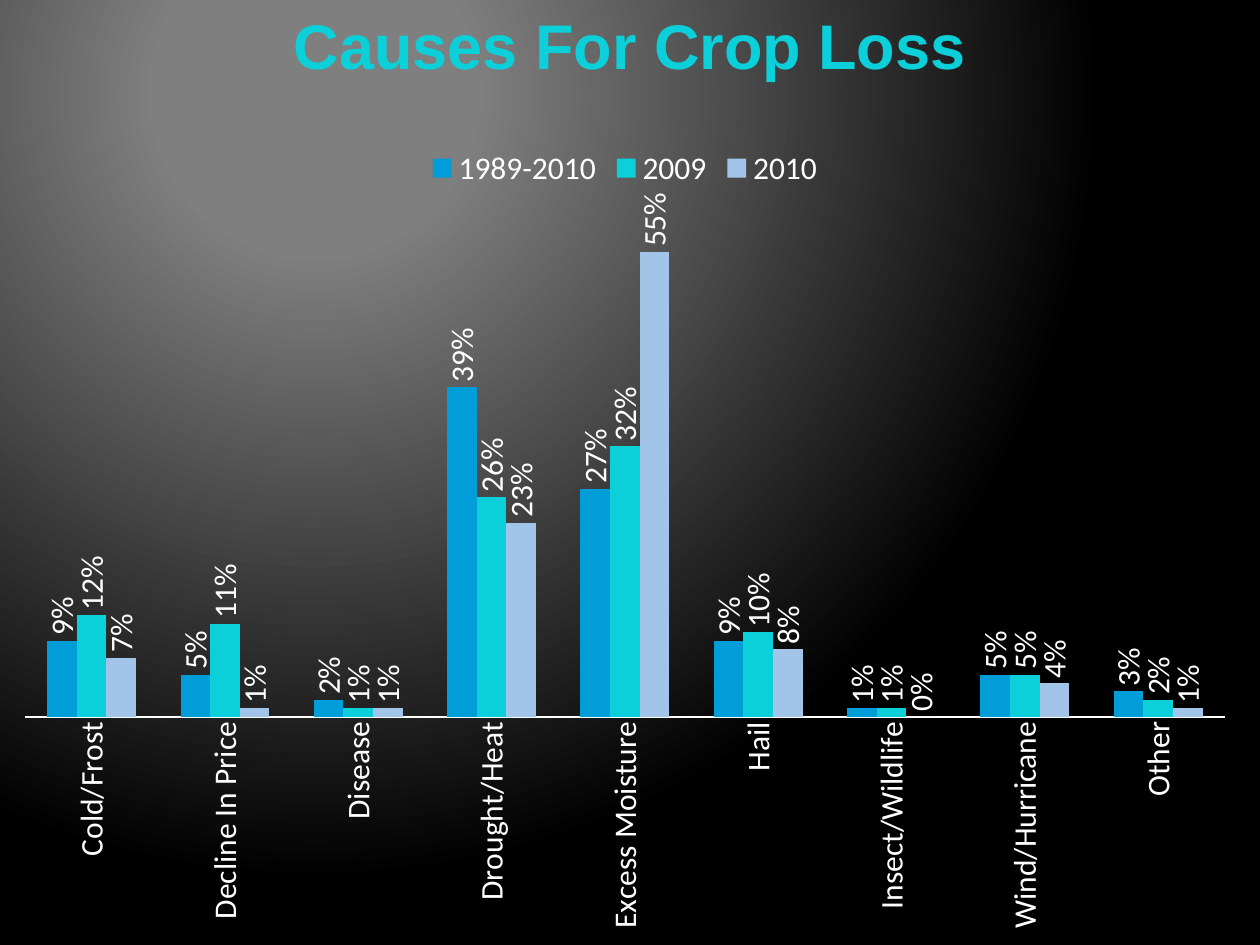
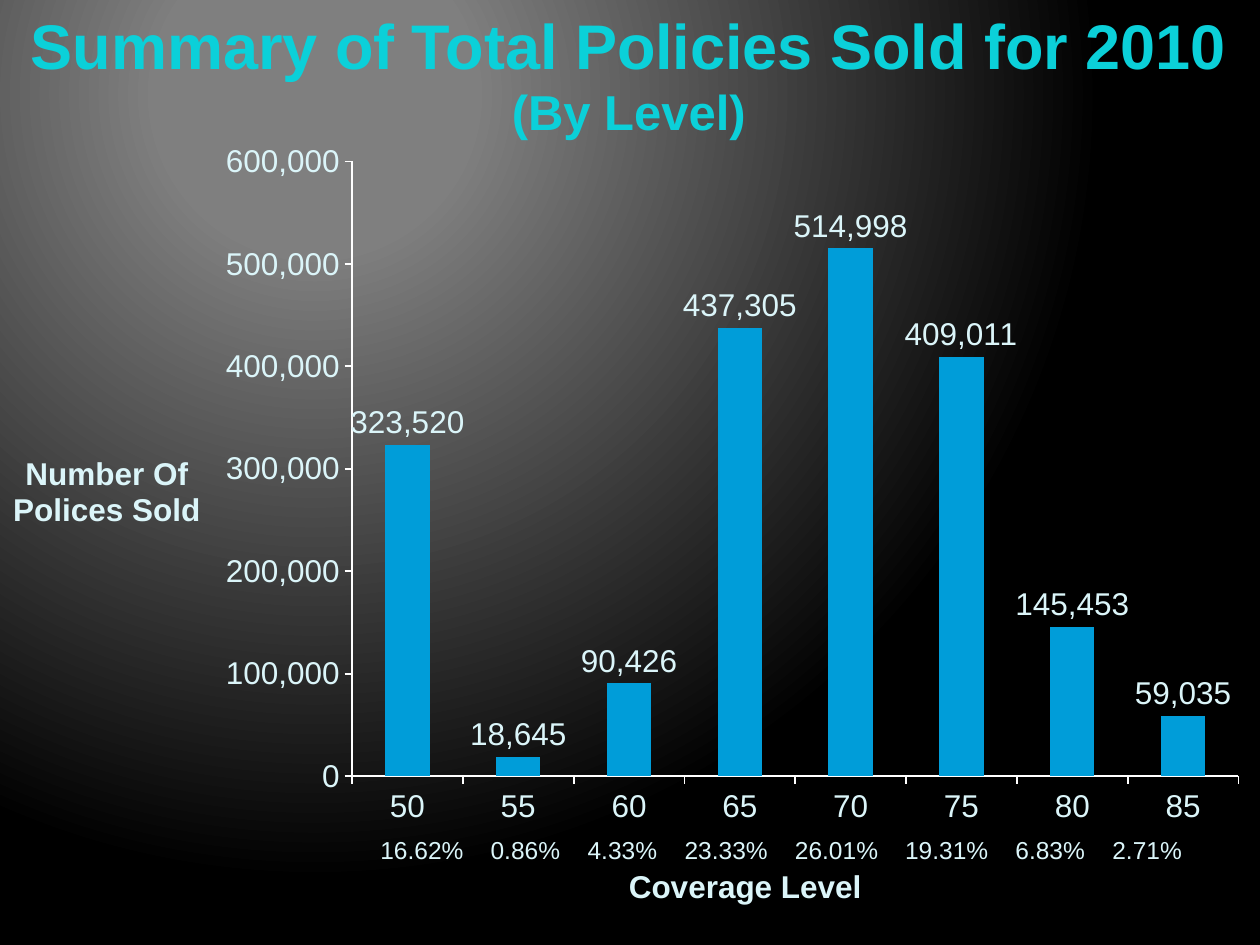
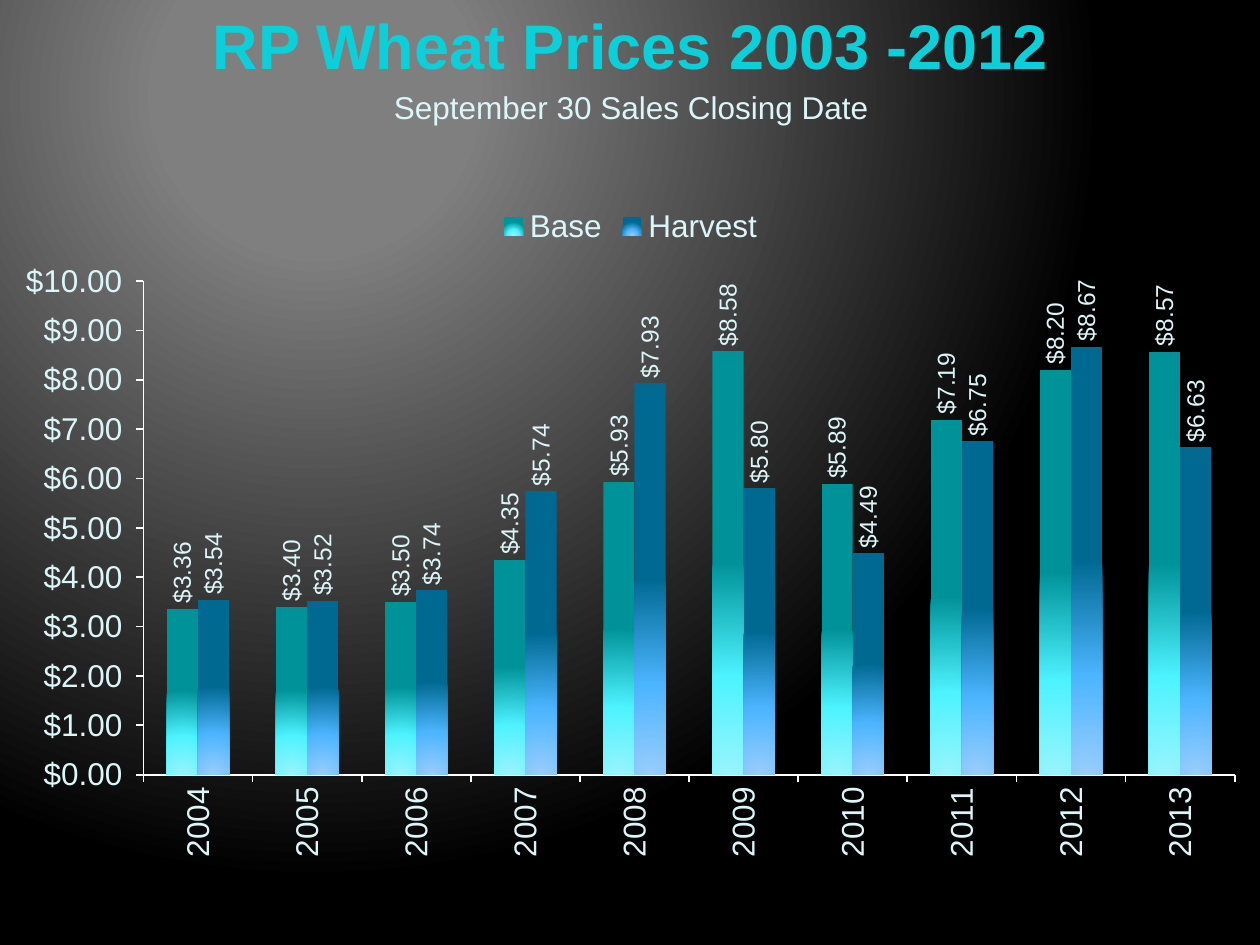
from dataclasses import dataclass
from itertools import accumulate

from lxml.etree import SubElement
from pptx import Presentation
from pptx.chart.data import CategoryChartData
from pptx.dml.color import RGBColor
from pptx.enum.chart import (XL_CHART_TYPE, XL_LABEL_POSITION,
                             XL_LEGEND_POSITION, XL_TICK_MARK)
from pptx.enum.text import MSO_ANCHOR, MSO_AUTO_SIZE, PP_ALIGN
from pptx.oxml import parse_xml
from pptx.oxml.ns import nsdecls, qn
from pptx.util import Inches, Pt


@dataclass(frozen=True)
class Theme:
    white: str = "FFFFFF"
    pale: str = "DBF5F9"
    blue: str = "009DD9"
    cyan: str = "0BD0D9"
    light_blue: str = "A2C4E8"
    heading_font: str = "Arial"
    body_font: str = "Calibri"
    title_size: int = 36
    subtitle_size: int = 28
    text_size: int = 18
    small_size: int = 14
    outline: float = 1.5
    axis_line: float = 1
    # Radial gradients: stops in percent and the focus rectangle
    backdrop: tuple = (((20, "7F7F7F"), (100, "000000")), (50, 20, 100, 100))
    teal_glow: tuple = (((0, "99F4FC"), (46, "4DF3FF"), (100, "009299")),
                        (50, 155, 50, -55))
    blue_glow: tuple = (((0, "99CDFC"), (46, "4CB5FF"), (100, "006992")),
                        (50, 155, 50, -55))


COLUMNS, ROWS = 100, 75
CELL = Inches(0.1)


def style_font(font, size, color, name, bold=False):
    font.size, font.name, font.bold = Pt(size), name, bold
    font.color.rgb = RGBColor.from_string(color)


def fill_radial(grad_fill, gradient):
    stops, focus = gradient
    for child in list(grad_fill):
        grad_fill.remove(child)
    stop_list = SubElement(grad_fill, qn("a:gsLst"))
    for position, color in stops:
        stop = SubElement(stop_list, qn("a:gs"), pos=str(position * 1000))
        SubElement(stop, qn("a:srgbClr"), val=color)
    circle = SubElement(grad_fill, qn("a:path"), **{"path": "circle"})
    SubElement(circle, qn("a:fillToRect"),
               **{side: str(share * 1000) for side, share in zip("ltrb", focus)})


def set_layout(parent, index, inner=False, **percent):
    """Place a chart part at fixed percentages of the chart."""
    for old in parent.findall(qn("c:layout")):
        parent.remove(old)
    layout = parse_xml(f"<c:layout {nsdecls('c')}/>")
    manual = SubElement(layout, qn("c:manualLayout"))
    if inner:
        SubElement(manual, qn("c:layoutTarget"), val="inner")
    for axis in "xy":
        SubElement(manual, qn(f"c:{axis}Mode"), val="edge")
    for key, share in percent.items():
        SubElement(manual, qn(f"c:{key}"), val=f"{share / 100:.3f}")
    parent.insert(index, layout)


def turn_text(element, degrees):
    for body in element.iter(qn("a:bodyPr")):
        body.set("rot", str(degrees * 60000))
        body.set("vert", "horz")


def no_fill():
    return parse_xml(f"<c:spPr {nsdecls('c', 'a')}><a:noFill/>"
                     "<a:ln><a:noFill/></a:ln></c:spPr>")


class Deck:
    def __init__(self, theme):
        self.theme = theme
        self.prs = Presentation()
        self.prs.slide_width, self.prs.slide_height = COLUMNS * CELL, ROWS * CELL
        self.slide = None
        master = self.prs.slide_master
        master.background.fill.gradient()
        fill_radial(next(master.element.iter(qn("a:gradFill"))), theme.backdrop)

    def box(self, cells):
        return [round(cell * CELL) for cell in cells]

    def add_slide(self, cells, title, subtitle=None):
        theme = self.theme
        self.slide = self.prs.slides.add_slide(self.prs.slide_layouts[5])
        heading = self.slide.shapes.title
        heading.left, heading.top, heading.width, heading.height = self.box(cells)
        frame = heading.text_frame
        frame.text = title
        if subtitle:
            frame.add_paragraph().text = subtitle
        frame.word_wrap, frame.vertical_anchor = True, MSO_ANCHOR.TOP
        frame.auto_size = MSO_AUTO_SIZE.SHAPE_TO_FIT_TEXT
        for paragraph, size in zip(frame.paragraphs,
                                   (theme.title_size, theme.subtitle_size)):
            paragraph.alignment = PP_ALIGN.CENTER
            style_font(paragraph.runs[0].font, size, theme.cyan,
                       theme.heading_font, True)
        for properties in heading.element.iter(qn("a:rPr")):
            properties.insert(0, parse_xml(
                f'<a:ln {nsdecls("a")} w="{Pt(theme.outline)}"><a:solidFill>'
                f'<a:srgbClr val="{theme.white}"/></a:solidFill></a:ln>'))

    def add_text(self, cells, text, size, bold=False, align=PP_ALIGN.CENTER):
        frame = self.slide.shapes.add_textbox(*self.box(cells)).text_frame
        frame.text = text
        frame.word_wrap = True
        frame.auto_size = MSO_AUTO_SIZE.SHAPE_TO_FIT_TEXT
        paragraph = frame.paragraphs[0]
        paragraph.alignment = align
        for run in paragraph.runs:
            style_font(run.font, size, self.theme.pale,
                       self.theme.heading_font, bold)
        return paragraph

    def add_shares(self, cells, shares):
        """One line of values, each followed by a gap of equal width."""
        row = self.add_text(cells, "\t".join(shares), self.theme.small_size,
                            align=PP_ALIGN.LEFT)
        tabs = SubElement(row._p.get_or_add_pPr(), qn("a:tabLst"))
        advances = (2.45 + 1.05 * len(share) for share in shares[:-1])
        for stop in accumulate(advances):
            SubElement(tabs, qn("a:tab"), pos=str(round(stop * CELL)), algn="l")

    def add_columns(self, cells, categories, series, plot, top, number_format,
                    font, color, unit=None, label_size=None, legend=None,
                    upright=True, ticks=True, value_title=None):
        theme = self.theme
        data = CategoryChartData(number_format=number_format)
        data.categories = categories
        for name, values, _ in series:
            data.add_series(name, values)
        chart = self.slide.shapes.add_chart(
            XL_CHART_TYPE.COLUMN_CLUSTERED, *self.box(cells), data).chart
        style_font(chart.font, theme.text_size, theme.white, font)
        chart.has_title = False
        columns = chart.plots[0]
        columns.gap_width, columns.vary_by_categories = 150, False

        # Series and their labels
        for bars, (_, _, paint) in zip(columns.series, series):
            bars.invert_if_negative = False
            fill = bars.format.fill
            if isinstance(paint, str):
                fill.solid()
                fill.fore_color.rgb = RGBColor.from_string(paint)
            else:
                fill.gradient()
                fill_radial(next(bars._element.iter(qn("a:gradFill"))), paint)
            labels = bars.data_labels
            labels.show_value = True
            labels.position = XL_LABEL_POSITION.OUTSIDE_END
            labels.number_format = number_format
            labels.number_format_is_linked = False
            style_font(labels.font, label_size or theme.text_size, color, font)

        # Axes
        tick = XL_TICK_MARK.OUTSIDE if ticks else XL_TICK_MARK.NONE
        values = chart.value_axis
        for axis in (chart.category_axis, values):
            axis.has_major_gridlines = False
            axis.major_tick_mark, axis.minor_tick_mark = tick, XL_TICK_MARK.NONE
            axis.format.line.color.rgb = RGBColor.from_string(theme.white)
            axis.format.line.width = Pt(theme.axis_line)
            style_font(axis.tick_labels.font, theme.text_size, color, font)
        values.minimum_scale, values.maximum_scale = 0, top
        values.tick_labels.number_format = number_format
        values.tick_labels.number_format_is_linked = False
        if unit:
            values.major_unit = unit
        else:
            values.visible = False
        if value_title:
            frame = values.axis_title.text_frame
            frame.text = value_title
            style_font(frame.paragraphs[0].runs[0].font, theme.text_size,
                       color, font, True)
            title = next(chart.element.iter(qn("c:title")))
            turn_text(title, 0)
            set_layout(title, 1, x=0.8, y=43)

        # Legend
        chart.has_legend = bool(legend)
        if legend:
            chart.legend.position = XL_LEGEND_POSITION.TOP
            chart.legend.include_in_layout = False
            style_font(chart.legend.font, theme.text_size, legend, font)

        # Plot placement, upright text and clear backgrounds
        if upright:
            for part in chart.element.iter(qn("c:catAx"), qn("c:dLbls")):
                turn_text(part, -90)
        area = next(chart.element.iter(qn("c:plotArea")))
        set_layout(area, 0, inner=True, **dict(zip("xywh", plot)))
        area.append(no_fill())
        chart.element.find(qn("c:txPr")).addprevious(no_fill())


def main():
    theme = Theme()
    deck = Deck(theme)

    # Causes of crop loss
    deck.add_slide((0, 0, 100, 7.1), "Causes For Crop Loss")
    deck.add_columns(
        (0, 10.6, 99.2, 64.4),
        ["Cold/Frost", "Decline In Price", "Disease", "Drought/Heat",
         "Excess Moisture", "Hail", "Insect/Wildlife", "Wind/Hurricane", "Other"],
        [("1989-2010", (.09, .05, .02, .39, .27, .09, .01, .05, .03), theme.blue),
         ("2009", (.12, .11, .01, .26, .32, .10, .01, .05, .02), theme.cyan),
         ("2010", (.07, .01, .01, .23, .55, .08, 0, .04, .01), theme.light_blue)],
        plot=(2, 9.4, 96, 62.5), top=0.6, number_format="0%",
        font=theme.body_font, color=theme.white, legend=theme.white, ticks=False)

    # Policies sold by coverage level
    deck.add_slide((-0.2, 0, 100.2, 11.8),
                   "Summary of Total Policies Sold for 2010", "(By Level)")
    deck.add_columns(
        (-0.2, 11.4, 99.8, 56.1),
        [str(level) for level in range(50, 90, 5)],
        [("Series 1", (323520, 18645, 90426, 437305, 514998, 409011, 145453,
                       59035), theme.blue)],
        plot=(28.2, 2.5, 70.5, 87), top=600000, unit=100000,
        number_format="#,##0", font=theme.heading_font, color=theme.pale,
        upright=False, value_title="Number Of Polices Sold")
    deck.add_text((45, 68.3, 28.3, 4.2), "Coverage Level", theme.text_size, True)
    deck.add_shares((29.2, 65.8, 70.8, 3.4),
                    ["16.62%", "0.86%", "4.33%", "23.33%", "26.01%", "19.31%",
                     "6.83%", "2.71%"])

    # Wheat prices
    deck.add_slide((0.1, 0, 99.9, 7.1), "RP Wheat Prices 2003 -2012")
    deck.add_text((0.1, 6.5, 100, 4), "September 30 Sales Closing Date",
                  theme.text_size)
    deck.add_columns(
        (0.1, 15.3, 99.9, 53.9),
        [str(year) for year in range(2004, 2014)],
        [("Base", (3.36, 3.4, 3.5, 4.35, 5.93, 8.58, 5.89, 7.19, 8.2, 8.57),
          theme.teal_glow),
         ("Harvest", (3.54, 3.52, 3.74, 5.74, 7.93, 5.8, 4.49, 6.75, 8.67, 6.63),
          theme.blue_glow)],
        plot=(11.3, 13, 86.7, 72.7), top=10, unit=1,
        number_format=r'"$"#,##0.00_);[Red]\("$"#,##0.00\)',
        font=theme.heading_font, color=theme.pale, label_size=theme.small_size,
        legend=theme.pale)

    deck.prs.save("out.pptx")


if __name__ == "__main__":
    main()
